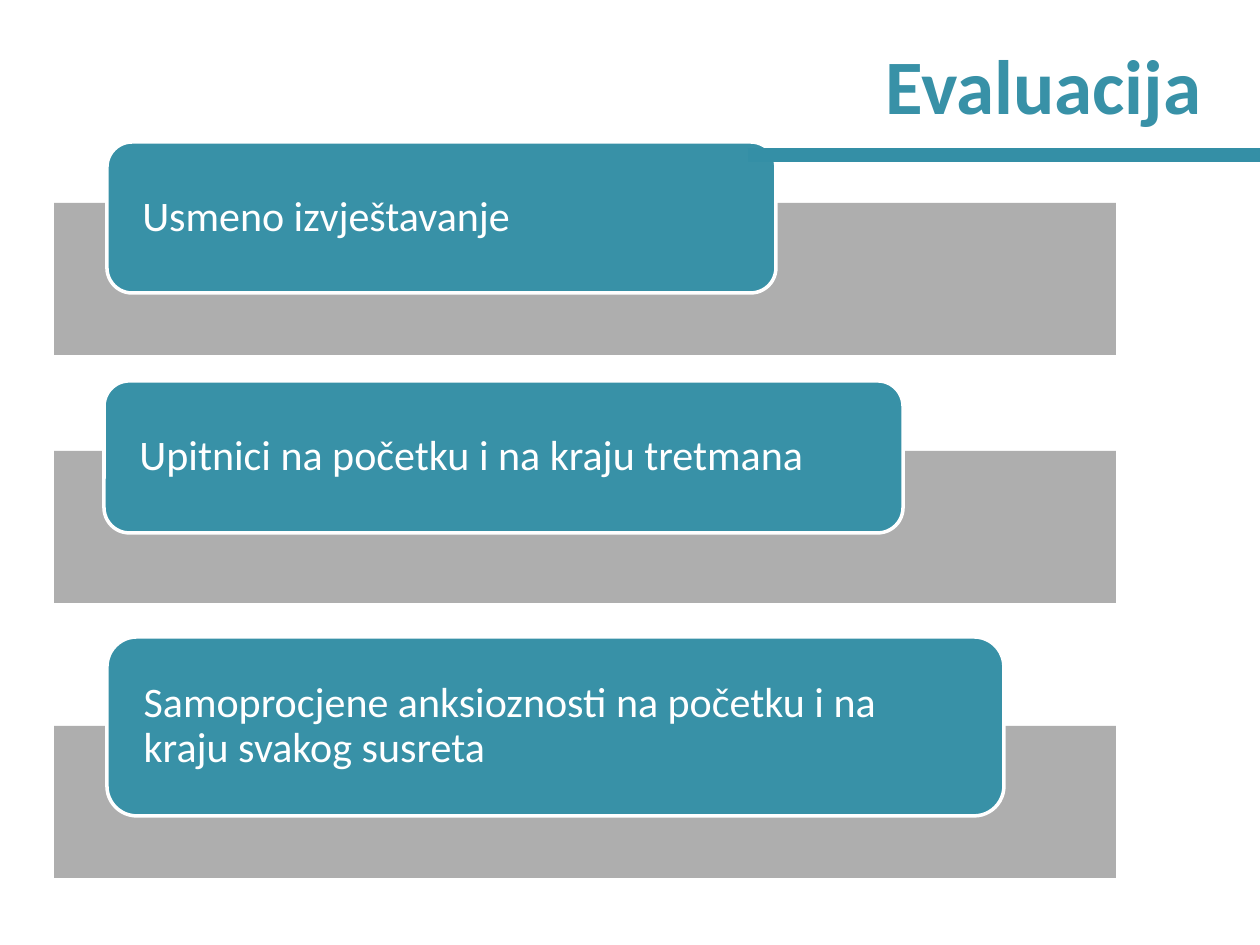
from lxml import etree
from pptx import Presentation
from pptx.dml.color import RGBColor
from pptx.enum.shapes import MSO_CONNECTOR, MSO_SHAPE
from pptx.enum.text import MSO_ANCHOR, MSO_AUTO_SIZE, PP_ALIGN
from pptx.oxml.ns import qn
from pptx.util import Emu, Pt

RECT, ROUNDED = MSO_SHAPE.RECTANGLE, MSO_SHAPE.ROUNDED_RECTANGLE
STRAIGHT = MSO_CONNECTOR.STRAIGHT
MIDDLE, NO_FIT = MSO_ANCHOR.MIDDLE, MSO_AUTO_SIZE.NONE
LEFT, CENTER = PP_ALIGN.LEFT, PP_ALIGN.CENTER
FONT = "Calibri"
TEAL, RULE, GRAY, WHITE = "3891A7", "348FA6", "A6A6A6", "FFFFFF"
BAR_LEFT, BAR_W, BAR_H = 54, 1062, 152
ITEMS = [
    ("Usmeno izvještavanje", 203, (53, -61, 669, 151)),
    ("Upitnici na početku i na kraju tretmana", 451, (50, -70, 799, 152)),
    ("Samoprocjene anksioznosti na početku i na kraju svakog susreta",
     726, (53, -89, 897, 179)),
]


def px(n):
    return Emu(round(n * 914400 / 126))


def rgb(color):
    return RGBColor.from_string(color)


def set_font(p, size, color, bold=False):
    p.font.name = FONT
    p.font.size = Pt(size)
    p.font.bold = bold
    p.font.color.rgb = rgb(color)


def add_box(s, kind, x, y, w, h, fill):
    sp = s.shapes.add_shape(kind, px(x), px(y), px(w), px(h))
    sp.shadow.inherit = False
    sp.fill.solid()
    sp.fill.fore_color.rgb = rgb(fill)
    sp.line.fill.background()
    return sp


def add_item(s, x, y, w, h, text, card):
    bar = add_box(s, RECT, x, y, w, h, GRAY)
    color = bar.fill._xPr.find(".//" + qn("a:srgbClr"))
    etree.SubElement(color, qn("a:alpha"), val="90000")

    dx, dy, card_w, card_h = card
    sp = add_box(s, ROUNDED, x + dx, y + dy, card_w, card_h, TEAL)
    sp.line.color.rgb = rgb(WHITE)
    sp.line.width = Pt(2)
    tf = sp.text_frame
    tf.word_wrap = True
    tf.vertical_anchor = MIDDLE
    tf.margin_left = tf.margin_right = px(28)
    tf.margin_top = tf.margin_bottom = 0
    p = tf.paragraphs[0]
    p.text = text
    p.alignment = LEFT
    p.line_spacing = 0.9
    set_font(p, 24, WHITE)


def add_header(s, x, y, w, h):
    title = s.shapes.title
    title.left, title.top, title.width, title.height = map(px, (x, y, w, h))
    tf = title.text_frame
    tf.auto_size = NO_FIT
    tf.vertical_anchor = MIDDLE
    p = tf.paragraphs[0]
    p.text = "Evaluacija"
    p.alignment = CENTER
    set_font(p, 44, TEAL, True)

    rule_y = px(y + h + 4)
    rule = s.shapes.add_connector(STRAIGHT, px(x - 80), rule_y, px(x + w), rule_y)
    rule.line.color.rgb = rgb(RULE)
    rule.line.width = Pt(8)
    etree.SubElement(rule._element.spPr, qn("a:effectLst"))


def main():
    prs = Presentation()
    prs.slide_width, prs.slide_height = px(1260), px(945)
    s = prs.slides.add_slide(prs.slide_layouts[5])
    for text, y, card in ITEMS:
        add_item(s, BAR_LEFT, y, BAR_W, BAR_H, text, card)
    add_header(s, 828, 16, 432, 135)
    prs.save("out.pptx")


if __name__ == "__main__":
    main()
